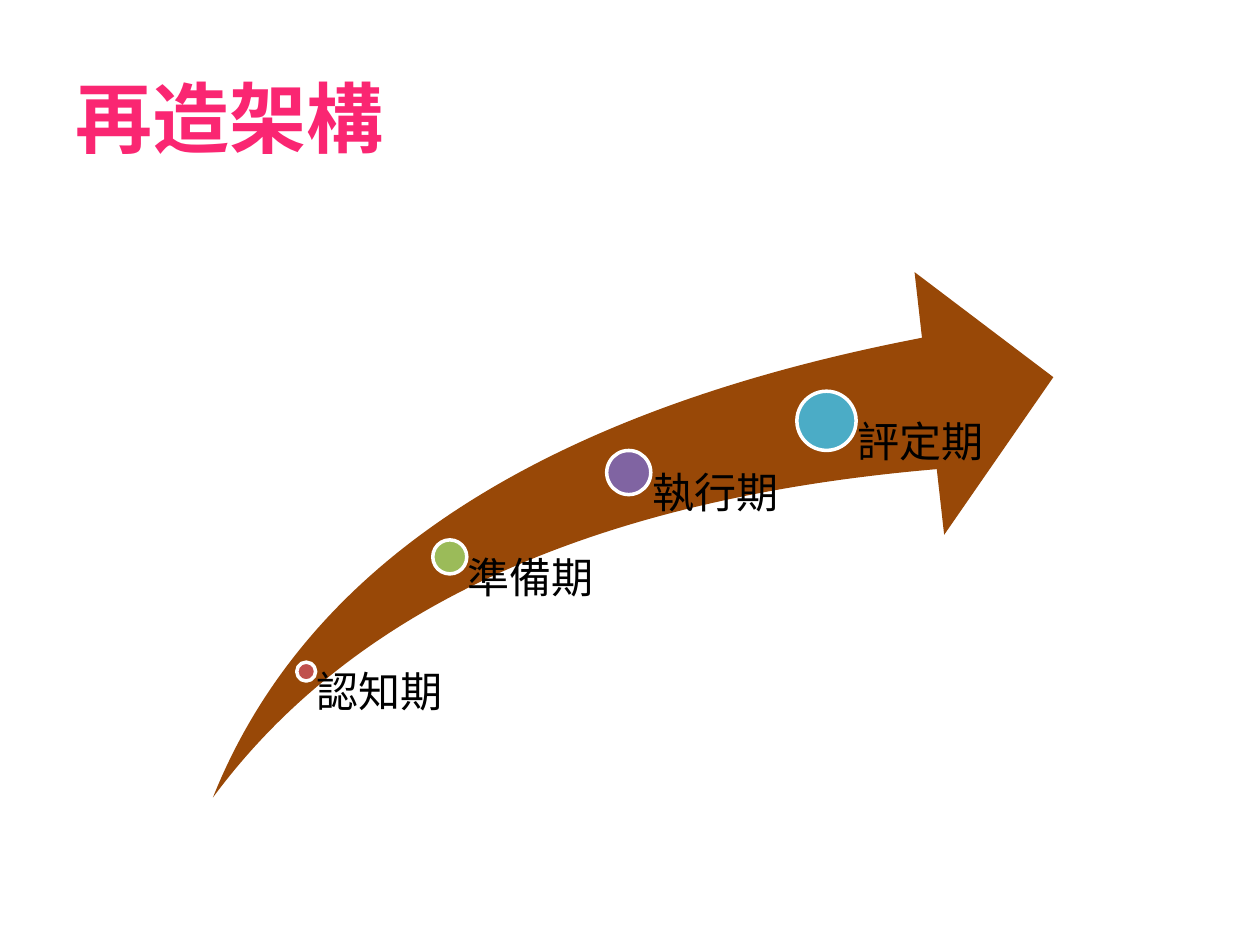
from pptx import Presentation
from pptx import util as u
from pptx.dml.color import RGBColor
from pptx.enum import shapes, text
from pptx.oxml.ns import qn
from lxml import etree


def color(value):
    return RGBColor.from_string(value)


class SlideBuilder:
    """Holds the style and the current slide."""

    TITLE_FONT = "Noto Sans CJK SC"
    LABEL_FONT = "Calibri"
    ASIAN_FONT = "Noto Sans CJK SC"

    def __init__(self, presentation):
        self.slide = presentation.slides.add_slide(presentation.slide_layouts[5])

    def place(self, shape, left, top, width, height):
        shape.left, shape.top = u.Inches(left), u.Inches(top)
        shape.width, shape.height = u.Inches(width), u.Inches(height)

    def format_text(self, paragraph, font_name, size, hex_color, bold=False):
        paragraph.alignment = text.PP_ALIGN.LEFT
        for run in paragraph.runs:
            run.font.name = font_name
            run.font.size = u.Pt(size)
            run.font.bold = bold
            run.font.color.rgb = color(hex_color)
            # East Asian typeface follows the Latin one
            latin = run.font._element.find(qn("a:latin"))
            asian = etree.Element(qn("a:ea"), typeface=self.ASIAN_FONT)
            latin.addnext(asian)

    def title(self, wording, left, top, width, height):
        shape = self.slide.shapes.title
        self.place(shape, left, top, width, height)
        frame = shape.text_frame
        frame.text = wording
        frame.auto_size = text.MSO_AUTO_SIZE.NONE
        frame.vertical_anchor = text.MSO_ANCHOR.MIDDLE
        self.format_text(frame.paragraphs[0], self.TITLE_FONT, 44, "FA2672", bold=True)

    def shape(self, kind, left, top, width, height, fill, line=None):
        shape = self.slide.shapes.add_shape(
            kind, u.Inches(left), u.Inches(top), u.Inches(width), u.Inches(height))
        shape.shadow.inherit = False
        shape.fill.solid()
        shape.fill.fore_color.rgb = color(fill)
        if line:
            shape.line.color.rgb = color(line)
            shape.line.width = u.Pt(2)
        else:
            shape.line.fill.background()
        return shape

    def label(self, wording, left, top, width, height, inset):
        box = self.slide.shapes.add_textbox(
            u.Inches(left), u.Inches(top), u.Inches(width), u.Inches(height))
        frame = box.text_frame
        frame.word_wrap = True
        frame.margin_left = u.Inches(inset)
        frame.margin_top = frame.margin_right = frame.margin_bottom = 0
        frame.text = wording
        paragraph = frame.paragraphs[0]
        paragraph.line_spacing = 0.9
        self.format_text(paragraph, self.LABEL_FONT, 24, "000000")


def main():
    presentation = Presentation()
    presentation.slide_width = u.Inches(10)
    presentation.slide_height = u.Inches(7.5)
    builder = SlideBuilder(presentation)

    builder.title("再造架構", 0.5, 0.3, 5.29, 1.25)

    # Rising arrow
    arrow_top, arrow_height = 2.16, 4.17
    arrow_bottom = arrow_top + arrow_height
    arrow = builder.shape(shapes.MSO_SHAPE.SWOOSH_ARROW,
                          1.69, arrow_top, 6.67, arrow_height, "984807")
    arrow.adjustments[0] = arrow.adjustments[1] = 0.25

    # Stages: name, dot centre, dot diameter, label width, label inset, dot colour
    stages = [
        ("認知期", 2.43, 5.33, 0.15, 1.14, 0.08, "C0504D"),
        ("準備期", 3.57, 4.42, 0.27, 1.4, 0.14, "9BBB59"),
        ("執行期", 4.99, 3.75, 0.35, 1.4, 0.19, "8064A2"),
        ("評定期", 6.56, 3.34, 0.47, 1.4, 0.25, "4BACC6"),
    ]
    for name, x, y, diameter, width, inset, fill in stages:
        builder.shape(shapes.MSO_SHAPE.OVAL, x - diameter / 2, y - diameter / 2,
                      diameter, diameter, fill, line="FFFFFF")
        # Each label starts at the dot's centre and reaches the arrow's foot
        builder.label(name, x, y, width, arrow_bottom - y, inset)

    presentation.save("out.pptx")


if __name__ == "__main__":
    main()
